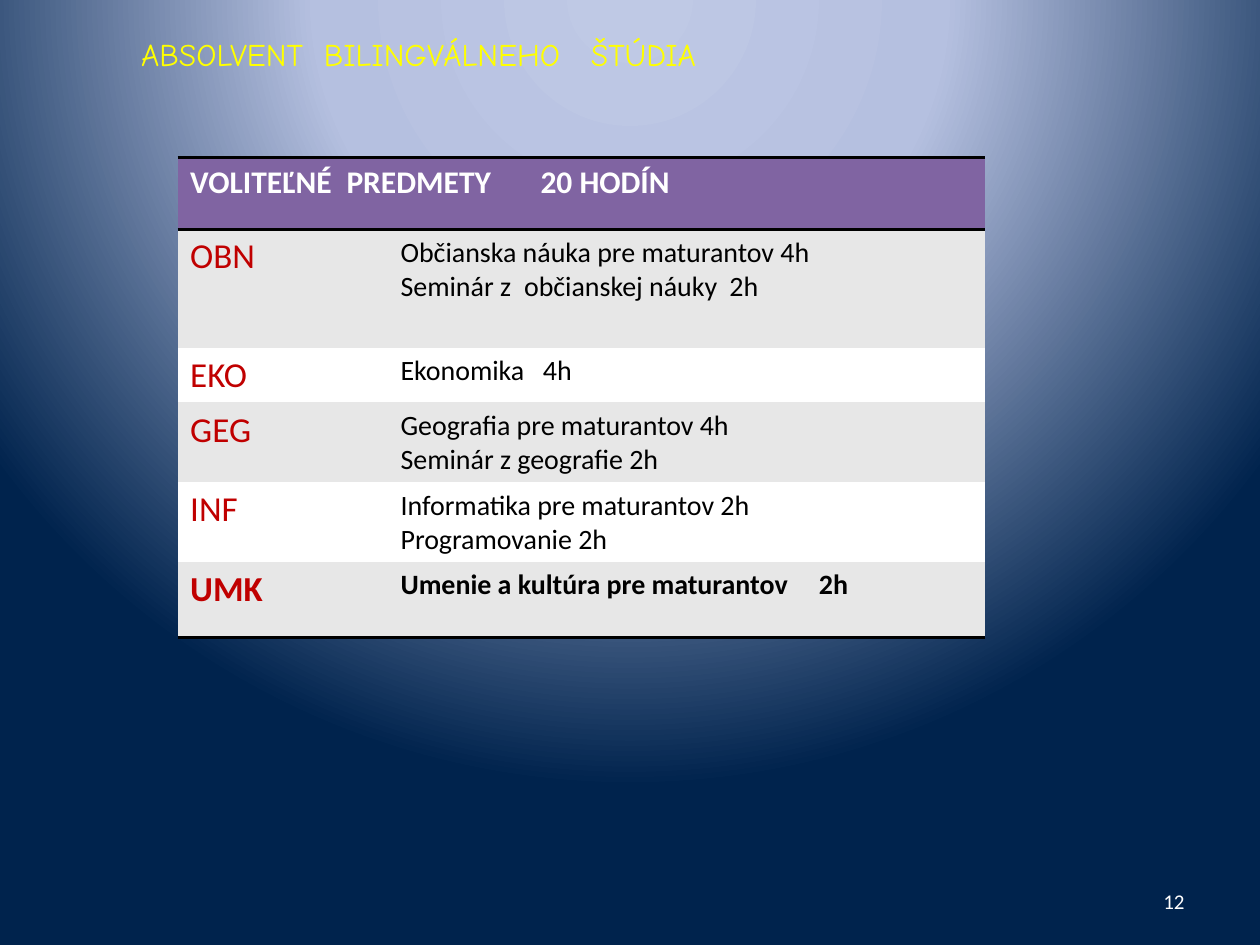
from lxml.etree import SubElement
from pptx import Presentation
from pptx.dml.color import RGBColor
from pptx.enum.text import MSO_ANCHOR, PP_ALIGN
from pptx.oxml import parse_xml
from pptx.oxml.ns import nsdecls, qn
from pptx.util import Inches, Pt

WHITE = RGBColor(0xFF, 0xFF, 0xFF)
BLACK = RGBColor(0, 0, 0)
YELLOW = RGBColor(0xFF, 0xFF, 0)
RED = RGBColor(0xC0, 0, 0)
PURPLE = RGBColor(0x80, 0x64, 0xA2)
GREY = RGBColor(0xE7, 0xE7, 0xE7)
GLOW = [(0, RGBColor(0xBF, 0xC9, 0xE5)), (40, RGBColor(0xB5, 0xC0, 0xE0)),
        (100, RGBColor(0, 0x23, 0x4D))]
NO_GRID_STYLE = "{2D5ABB26-0587-4C30-8999-92F81FD0307C}"

COLUMNS = [1.67, 4.74]
ROWS = [0.57, 0.94, 0.41, 0.6, 0.6, 0.6]
HEADER = ("VOLITEĽNÉ\tPREDMETY\t20 HODÍN", 1.24, 2.78)
SUBJECTS = [
    ("OBN", [("Občianska náuka pre maturantov 4h",),
             ("Seminár z\tobčianskej náuky\t2h", 0.98, 2.61)]),
    ("EKO", [("Ekonomika\t4h", 1.13)]),
    ("GEG", [("Geografia pre maturantov 4h",), ("Seminár z geografie 2h",)]),
    ("INF", [("Informatika pre maturantov 2h",), ("Programovanie 2h",)]),
    ("UMK", [("Umenie a kultúra pre maturantov\t2h", 3.32)]),
]


def style(size, color, bold=False, name="Calibri"):
    """Return the format values of a run."""
    return {"size": Pt(size), "bold": bold, "name": name, "color": color}


def write(tf, lines, fmt, align=PP_ALIGN.LEFT):
    """Write lines of text, each followed by its tab stops in inches."""
    for i, (text, *stops) in enumerate(lines):
        p = tf.add_paragraph() if i else tf.paragraphs[0]
        p.alignment = align
        if stops:
            tabs = SubElement(p._p.get_or_add_pPr(), qn("a:tabLst"))
            for stop in stops:
                SubElement(tabs, qn("a:tab"), pos=str(Inches(stop)), algn="l")
        r = p.add_run()
        r.text = text
        for key, value in fmt.items():
            if key == "color":
                r.font.color.rgb = value
            else:
                setattr(r.font, key, value)


def place(sp, left, top, width, height):
    """Place a shape, with lengths in inches."""
    for key, value in zip(("left", "top", "width", "height"),
                          (left, top, width, height)):
        setattr(sp, key, Inches(value))


def paint_background(s):
    """Give the slide a round glow that comes from above."""
    stops = "".join(f'<a:gs pos="{pos * 1000}"><a:srgbClr val="{color}"/></a:gs>'
                    for pos, color in GLOW)
    s.element.cSld.insert(0, parse_xml(
        f'<p:bg {nsdecls("p", "a")}><p:bgPr><a:gradFill rotWithShape="1">'
        f'<a:gsLst>{stops}</a:gsLst><a:path path="circle">'
        '<a:fillToRect l="50000" t="-80000" r="50000" b="180000"/></a:path>'
        '</a:gradFill><a:effectLst/></p:bgPr></p:bg>'))


def rule(cell, sides):
    """Draw black lines on the given sides of a cell."""
    for i, side in enumerate(sides):
        cell._tc.get_or_add_tcPr().insert(i, parse_xml(
            f'<a:ln{side} {nsdecls("a")} w="{Pt(2)}"><a:solidFill>'
            f'<a:srgbClr val="{BLACK}"/></a:solidFill></a:ln{side}>'))


def fill_row(cells, color, sides=""):
    """Fill and rule the cells of one row."""
    for cell in cells:
        cell.fill.solid()
        cell.fill.fore_color.rgb = color
        rule(cell, sides)


def add_title(s):
    """Write the title in its placeholder."""
    sp = s.shapes.title
    place(sp, 1.02, 0.23, 7.42, 0.4)
    sp.text_frame.vertical_anchor = MSO_ANCHOR.TOP
    write(sp.text_frame, [("ABSOLVENT\tBILINGVÁLNEHO\tŠTÚDIA", 1.45, 3.57)],
          style(18, YELLOW, name="Comic Neue"))


def add_subjects(s):
    """Add the table of optional subjects."""
    frame = s.shapes.add_table(len(ROWS), len(COLUMNS), Inches(1.41), Inches(1.25),
                               Inches(sum(COLUMNS)), Inches(sum(ROWS)))
    table = frame.table
    table._tbl.tblPr.find(qn("a:tableStyleId")).text = NO_GRID_STYLE
    for column, width in zip(table.columns, COLUMNS):
        column.width = Inches(width)
    for row, height in zip(table.rows, ROWS):
        row.height = Inches(height)
    fill_row(table.rows[0].cells, PURPLE, "TB")
    table.cell(0, 0).merge(table.cell(0, 1))
    write(table.cell(0, 0).text_frame, [HEADER], style(18, WHITE, True))
    for i, (code, courses) in enumerate(SUBJECTS, 1):
        last = i == len(SUBJECTS)
        fill_row(table.rows[i].cells, GREY if i % 2 else WHITE, "B" if last else "")
        write(table.cell(i, 0).text_frame, [(code,)], style(20, RED, last))
        write(table.cell(i, 1).text_frame, courses, style(16, BLACK, last))


def add_page_number(s):
    """Add the page number at the bottom right."""
    sp = s.shapes.add_textbox(0, 0, 0, 0)
    place(sp, 7.17, 6.95, 2.33, 0.4)
    sp.text_frame.word_wrap = True
    sp.text_frame.vertical_anchor = MSO_ANCHOR.MIDDLE
    write(sp.text_frame, [("12",)], style(12, WHITE), PP_ALIGN.RIGHT)


def main():
    """Build the slide and save it."""
    prs = Presentation()
    prs.slide_width, prs.slide_height = Inches(10), Inches(7.5)
    s = prs.slides.add_slide(prs.slide_layouts[5])
    paint_background(s)
    add_page_number(s)
    add_subjects(s)
    add_title(s)
    prs.save("out.pptx")


if __name__ == "__main__":
    main()
